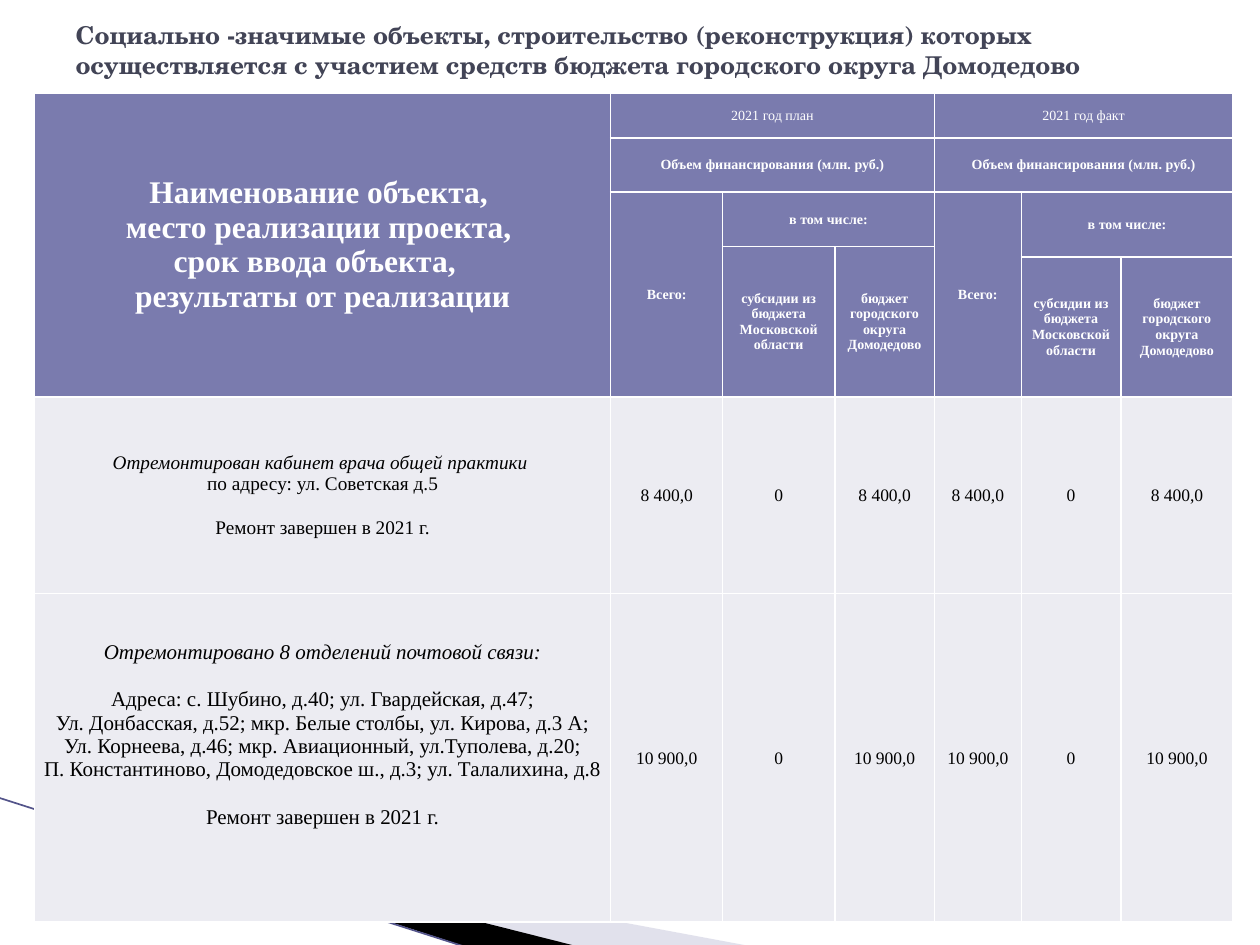
from lxml.etree import SubElement
from pptx import Presentation
from pptx.dml.color import RGBColor
from pptx.enum.shapes import MSO_CONNECTOR
from pptx.enum.text import MSO_ANCHOR, MSO_AUTO_SIZE, PP_ALIGN
from pptx.oxml.ns import qn
from pptx.util import Cm, Pt

COLORS = {"title": "424456", "header": "7A7BAE", "body": "ECECF2", "white": "FFFFFF",
          "text": "000000", "wedge": "B6B6D1", "shadow": "000000", "line": "53548A"}
TITLE_FONT = "TeX Gyre Schola"
TABLE_FONT = "Times New Roman"

COLUMN_WIDTHS = [11.61, 2.26, 2.26, 2.01, 1.75, 2.01, 2.26]
ROW_HEIGHTS = [0.91, 1.09, 1.1, 0.21, 2.82, 3.96, 6.63]
HEADER_ROWS = 5

TITLE = ("Cоциально -значимые объекты, строительство (реконструкция) которых "
         "осуществляется с участием средств бюджета городского округа Домодедово")
OBJECT_HEADING = ["Наименование объекта, ", "место реализации проекта, ",
                  "срок ввода объекта,  ", "результаты от реализации"]
VOLUME = "Объем финансирования (млн. руб.)"
SUBSIDY = "субсидии из бюджета Московской области"
CITY_BUDGET = "бюджет городского округа Домодедово"

# year, first column, rows taken by the "including" heading
YEAR_GROUPS = [("2021 год план", 1, 1), ("2021 год факт", 4, 2)]

# size, bottom margin, amounts, blocks of lines (the first block is italic)
PROJECTS = [
    (11, 0, ["8 400,0", "0", "8 400,0"],
     [["Отремонтирован кабинет врача общей практики "],
      ["по адресу: ул. Советская д.5"],
      ["Ремонт завершен в 2021 г."]], {2}),
    (12, 0.93, ["10 900,0", "0", "10 900,0"],
     [["Отремонтировано 8 отделений почтовой связи:"],
      ["Адреса: с. Шубино, д.40; ул. Гвардейская, д.47;",
       "Ул. Донбасская, д.52; мкр. Белые столбы, ул. Кирова, д.3 А;",
       "Ул. Корнеева, д.46; мкр. Авиационный, ул.Туполева, д.20;",
       "П. Константиново, Домодедовское ш., д.3; ул. Талалихина, д.8"],
      ["Ремонт завершен в 2021 г."]], {1, 2}),
]


def rgb(name):
    return RGBColor.from_string(COLORS[name])


def set_font(font, color, **values):
    font.color.rgb = rgb(color)
    for name, value in values.items():
        setattr(font, name, value)


def add_wedge(slide, points, color, opacity=100):
    corners = [(Cm(x), Cm(y)) for x, y in points]
    builder = slide.shapes.build_freeform(*corners[0])
    builder.add_line_segments(corners[1:], close=True)
    shape = builder.convert_to_shape()
    shape.shadow.inherit = False
    shape.fill.solid()
    shape.fill.fore_color.rgb = rgb(color)
    shape.line.fill.background()
    if opacity < 100:
        color_element = shape.fill._xPr.find(".//" + qn("a:srgbClr"))
        SubElement(color_element, qn("a:alpha"), val=str(opacity * 1000))


def add_line(slide, start, end):
    points = [Cm(value) for value in (*start, *end)]
    connector = slide.shapes.add_connector(MSO_CONNECTOR.STRAIGHT, *points)
    connector.line.color.rgb = rgb("line")
    connector.line.width = Pt(0.95)
    SubElement(connector._element.spPr, qn("a:effectLst"))


def format_title(slide):
    title = slide.shapes.title
    title.left, title.top, title.width, title.height = Cm(1.27), Cm(0.13), Cm(22.86), Cm(1.75)
    frame = title.text_frame
    frame.text = TITLE
    frame.word_wrap = True
    frame.auto_size = MSO_AUTO_SIZE.NONE
    frame.vertical_anchor = MSO_ANCHOR.MIDDLE
    paragraph = frame.paragraphs[0]
    paragraph.alignment = PP_ALIGN.LEFT
    set_font(paragraph.runs[0].font, "title", name=TITLE_FONT, size=Pt(14), bold=True)


def style_cell(cell, fill):
    """Give a cell its fill, thin white borders and no margins."""
    cell.margin_left = cell.margin_right = cell.margin_top = cell.margin_bottom = 0
    cell.vertical_anchor = MSO_ANCHOR.MIDDLE
    properties = cell._tc.get_or_add_tcPr()
    for side in ("L", "R", "T", "B"):
        border = SubElement(properties, qn(f"a:ln{side}"), w=str(Pt(1)))
        solid = SubElement(border, qn("a:solidFill"))
        SubElement(solid, qn("a:srgbClr"), val=COLORS["white"])
    cell.fill.solid()
    cell.fill.fore_color.rgb = rgb(fill)


def add_paragraph(cell, text, color, size, bold=False, italic=False, before=0):
    frame = cell.text_frame
    paragraph = frame.add_paragraph() if cell.text else frame.paragraphs[0]
    paragraph.alignment = PP_ALIGN.CENTER
    if before:
        paragraph.space_before = Pt(before)
    run = paragraph.add_run()
    run.text = text
    set_font(run.font, color, name=TABLE_FONT, size=Pt(size), bold=bold, italic=italic)


def add_heading(table, row, column, rows, columns, lines, size=8, bold=True):
    cell = table.cell(row, column)
    if rows * columns > 1:
        cell.merge(table.cell(row + rows - 1, column + columns - 1))
    for line in lines:
        add_paragraph(cell, line, "white", size, bold)


def fill_header(table):
    add_heading(table, 0, 0, HEADER_ROWS, 1, OBJECT_HEADING, size=18)
    for year, first, including_rows in YEAR_GROUPS:
        add_heading(table, 0, first, 1, 3, [year], bold=False)
        add_heading(table, 1, first, 1, 3, [VOLUME])
        add_heading(table, 2, first, 3, 1, ["Всего:"])
        add_heading(table, 2, first + 1, including_rows, 2, ["в том числе:"])
        detail_row = 2 + including_rows
        for offset, label in enumerate([SUBSIDY, CITY_BUDGET], 1):
            add_heading(table, detail_row, first + offset, HEADER_ROWS - detail_row, 1, [label])


def fill_project(table, row, size, bottom, amounts, blocks, spaced_blocks):
    description = table.cell(row, 0)
    description.margin_bottom = Cm(bottom)
    for block_index, block in enumerate(blocks):
        for line_index, line in enumerate(block):
            spaced = block_index in spaced_blocks and line_index == 0
            add_paragraph(description, line, "text", size, italic=block_index == 0,
                          before=size * 1.15 if spaced else 0)
    for column, amount in enumerate(amounts * len(YEAR_GROUPS), 1):
        cell = table.cell(row, column)
        cell.margin_left = cell.margin_right = cell.margin_top = Cm(0.03)
        add_paragraph(cell, amount, "text", 10)


def add_financing_table(slide):
    table = slide.shapes.add_table(
        len(ROW_HEIGHTS), len(COLUMN_WIDTHS), Cm(0.7), Cm(1.87),
        Cm(sum(COLUMN_WIDTHS)), Cm(sum(ROW_HEIGHTS))).table
    table.first_row = table.horz_banding = False
    for column, width in zip(table.columns, COLUMN_WIDTHS):
        column.width = Cm(width)
    for index, (row, height) in enumerate(zip(table.rows, ROW_HEIGHTS)):
        row.height = Cm(height)
        for cell in row.cells:
            style_cell(cell, "header" if index < HEADER_ROWS else "body")
    fill_header(table)
    for row, project in enumerate(PROJECTS, HEADER_ROWS):
        fill_project(table, row, *project)


def main():
    presentation = Presentation()
    presentation.slide_width, presentation.slide_height = Cm(25.4), Cm(19.05)
    slide = presentation.slides.add_slide(presentation.slide_layouts[5])
    add_wedge(slide, [(1.4, 16.52), (15.11, 19.07), (11.58, 19.07)], "wedge", opacity=40)
    add_wedge(slide, [(1.35, 16.48), (11.61, 19.07), (9.45, 19.1)], "shadow")
    add_line(slide, (-0.03, 16.08), (9.42, 19.1))
    format_title(slide)
    add_financing_table(slide)
    presentation.save("out.pptx")


if __name__ == "__main__":
    main()
